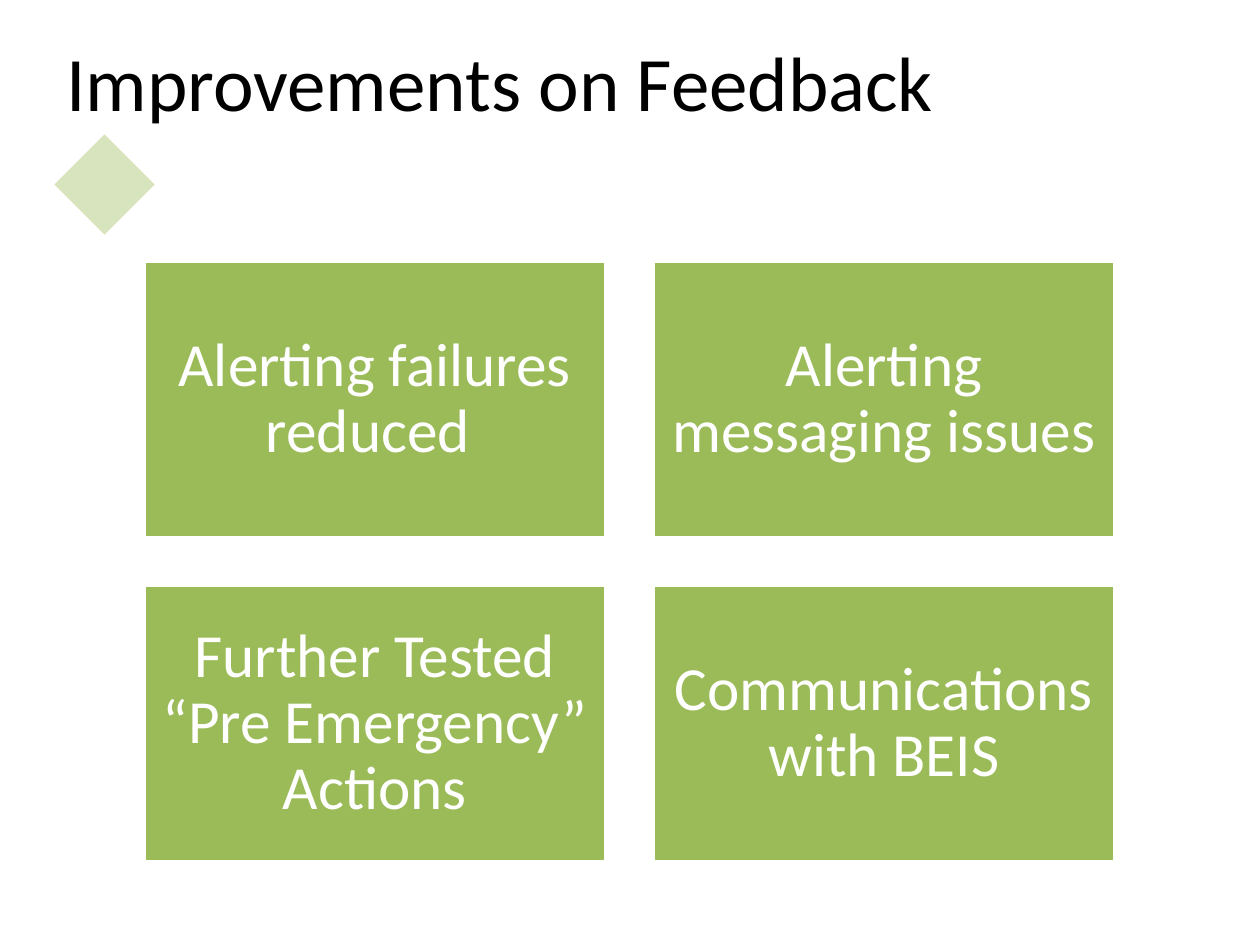
from dataclasses import dataclass

from pptx import Presentation
from pptx.dml.color import RGBColor
from pptx.enum.shapes import MSO_SHAPE
from pptx.enum.text import MSO_ANCHOR, PP_ALIGN
from pptx.util import Emu, Pt

RECTANGLE = MSO_SHAPE.RECTANGLE
MIDDLE = MSO_ANCHOR.MIDDLE
LEFT = PP_ALIGN.LEFT
CENTER = PP_ALIGN.CENTER

BLACK = RGBColor(0x00, 0x00, 0x00)
WHITE = RGBColor(0xFF, 0xFF, 0xFF)
GREEN = RGBColor(0x9B, 0xBB, 0x59)
PALE_GREEN = RGBColor(0xD7, 0xE4, 0xBD)

FONT = "Calibri"
PX_PER_INCH = 126
CARD_INSET = 18
COLUMNS = 2
GRID_LEFT, GRID_TOP = 144, 261
CARD_WIDTH, CARD_HEIGHT = 462, 277
GAP = 47
CARD_TEXTS = (
    "Alerting failures reduced ",
    "Alerting messaging issues ",
    "Further Tested “Pre Emergency” Actions",
    "Communications with BEIS",
)


@dataclass(frozen=True)
class Area:
    left: int
    top: int
    width: int
    height: int

    def emu(self) -> tuple[Emu, Emu, Emu, Emu]:
        return px(self.left), px(self.top), px(self.width), px(self.height)


@dataclass(frozen=True)
class Card:
    area: Area
    text: str


def px(length: int) -> Emu:
    return Emu(round(length * 914400 / PX_PER_INCH))


def write(box, text: str, size: int, color: RGBColor, align) -> None:
    frame = box.text_frame
    frame.word_wrap = True
    frame.vertical_anchor = MIDDLE
    para = frame.paragraphs[0]
    para.alignment = align
    span = para.add_run()
    span.text = text
    span.font.name = FONT
    span.font.size = Pt(size)
    span.font.color.rgb = color


def draw_rectangle(page, area: Area, fill: RGBColor):
    box = page.shapes.add_shape(RECTANGLE, *area.emu())
    box.shadow.inherit = False
    box.fill.solid()
    box.fill.fore_color.rgb = fill
    return box


def draw_diamond(page, area: Area) -> None:
    diamond = draw_rectangle(page, area, PALE_GREEN)
    diamond.line.fill.background()
    diamond.rotation = 45


def draw_title(page, area: Area, text: str) -> None:
    write(page.shapes.add_textbox(*area.emu()), text, 44, BLACK, LEFT)


def draw_card(page, card: Card) -> None:
    box = draw_rectangle(page, card.area, GREEN)
    box.line.color.rgb = WHITE
    box.line.width = Pt(2)
    write(box, card.text, 35, WHITE, CENTER)
    frame = box.text_frame
    frame.margin_left = frame.margin_right = px(CARD_INSET)
    frame.margin_top = frame.margin_bottom = px(CARD_INSET)
    frame.paragraphs[0].line_spacing = 0.9


def card_area(index: int) -> Area:
    row, column = divmod(index, COLUMNS)
    return Area(
        GRID_LEFT + column * (CARD_WIDTH + GAP),
        GRID_TOP + row * (CARD_HEIGHT + GAP),
        CARD_WIDTH,
        CARD_HEIGHT,
    )


def main() -> None:
    deck = Presentation()
    deck.slide_width, deck.slide_height = px(1260), px(945)
    page = deck.slides.add_slide(deck.slide_layouts[6])
    draw_diamond(page, Area(69, 149, 71, 71))
    draw_title(page, Area(54, 6, 1012, 149), "Improvements on Feedback")
    for index, text in enumerate(CARD_TEXTS):
        draw_card(page, Card(card_area(index), text))
    deck.save("out.pptx")


if __name__ == "__main__":
    main()
